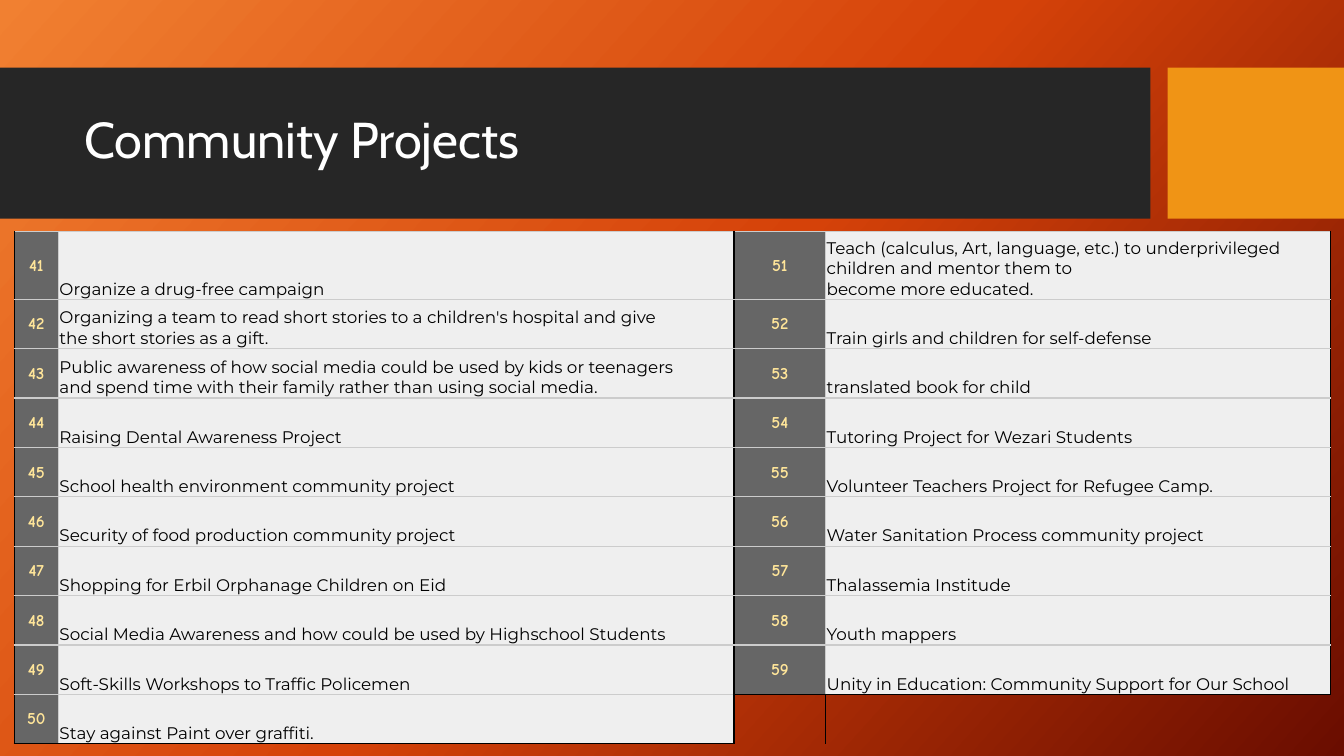
from copy import deepcopy
from itertools import zip_longest

from lxml.etree import SubElement
from pptx import Presentation
from pptx.dml.color import RGBColor
from pptx.enum.shapes import MSO_SHAPE
from pptx.enum.text import MSO_ANCHOR, PP_ALIGN
from pptx.oxml.ns import qn
from pptx.util import Inches, Pt

WIDE, HIGH = 13.33, 7.5
BLACK, GREY = "000000", "CCCCCC"
PLAIN = "{2D5ABB26-0587-4C30-8999-92F81FD0307C}"  # table style without grid
COLS = [0.44, 6.7, 0.91, 5.01]
ROWS = [0.67] + [0.49] * 9
FIRST = 41
LEFT = [
    "Organize a drug-free campaign",
    "Organizing a team to read short stories to a children's hospital and give\n"
    "the short stories as a gift.",
    "Public awareness of how social media could be used by kids or teenagers \n"
    "and spend time with their family rather than using social media.",
    "Raising Dental Awareness Project",
    "School health environment community project",
    "Security of food production community project",
    "Shopping for Erbil Orphanage Children on Eid",
    "Social Media Awareness and how could be used by Highschool Students",
    "Soft-Skills Workshops to Traffic Policemen",
    "Stay against Paint over graffiti.",
]
RIGHT = [
    "Teach (calculus, Art, language, etc.) to underprivileged "
    "children and mentor them to\nbecome more educated.",
    "Train girls and children for self-defense",
    "translated book for child",
    "Tutoring Project for Wezari Students",
    "Volunteer Teachers Project for Refugee Camp.",
    "Water Sanitation Process community project",
    "Thalassemia Institude",
    "Youth mappers",
    "Unity in Education: Community Support for Our School",
]


def paint(target, tone):
    target.fill.solid()
    target.fill.fore_color.rgb = RGBColor.from_string(tone)


def style(para, face, size, tone, bold=False):
    for run in para.runs:
        font = run.font
        font.name, font.size, font.bold = face, Pt(size), bold
        font.color.rgb = RGBColor.from_string(tone)


def backdrop(slide):
    fill = slide.background.fill
    fill.gradient()
    fill.gradient_angle = 318
    stops = slide.element.find(".//" + qn("a:gsLst"))
    stops.append(deepcopy(stops[-1]))
    tones = ["F18031", "D54209", "6A0D00"]
    for stop, tone, place in zip(fill.gradient_stops, tones, [0, 0.5, 1]):
        stop.color.rgb = RGBColor.from_string(tone)
        stop.position = place


def block(slide, left, top, width, height, tone):
    box = slide.shapes.add_shape(
        MSO_SHAPE.RECTANGLE, *map(Inches, (left, top, width, height)))
    box.shadow.inherit = False
    paint(box, tone)
    box.line.fill.background()


def banner(slide, top, height):
    """Dark title band with an accent block at its right end."""
    band, accent = 11.41, 1.75
    block(slide, 0, top, band, height, "262626")
    block(slide, WIDE - accent, top, accent, height, "F09415")
    box = slide.shapes.add_textbox(
        Inches(0.74), Inches(top + 0.15), Inches(band - 0.9), Inches(1.18))
    frame = box.text_frame
    frame.word_wrap = True
    frame.vertical_anchor = MSO_ANCHOR.MIDDLE
    frame.text = "Community Projects"
    para = frame.paragraphs[0]
    para.line_spacing = 0.9
    style(para, "Cabin", 36, "FFFFFF")


def edge(cell, **tones):
    """Draw 1 pt borders, given in the order L, R, T, B."""
    props = cell._tc.get_or_add_tcPr()
    for spot, (side, tone) in enumerate(tones.items()):
        line = SubElement(props, qn("a:ln" + side), w=str(Pt(1)))
        fill = SubElement(line, qn("a:solidFill"))
        SubElement(fill, qn("a:srgbClr"), val=tone)
        props.insert(spot, line)


def write(cell, text, number, last):
    cell.margin_left = cell.margin_right = cell.margin_top = Inches(0.01)
    cell.margin_bottom = 0
    para = cell.text_frame.paragraphs[0]
    para.text = text
    foot = BLACK if last else GREY
    if number:
        cell.vertical_anchor = MSO_ANCHOR.MIDDLE
        para.alignment = PP_ALIGN.CENTER
        style(para, "Comic Neue", 12, "FFE599", True)
        paint(cell, "666666")
        edge(cell, L=BLACK, R=GREY, T=GREY, B=foot)
    else:
        cell.vertical_anchor = MSO_ANCHOR.BOTTOM
        style(para, "Montserrat", 12, BLACK)
        paint(cell, "EFEFEF")
        edge(cell, L=GREY, R=BLACK, T=GREY, B=foot)


def listing(slide, left, top):
    """Two numbered lists side by side in one table."""
    frame = slide.shapes.add_table(
        len(ROWS), len(COLS), Inches(left), Inches(top),
        Inches(sum(COLS)), Inches(sum(ROWS)))
    table = frame.table
    table.first_row = table.horz_banding = False
    table._tbl.find(".//" + qn("a:tableStyleId")).text = PLAIN
    for col, width in zip(table.columns, COLS):
        col.width = Inches(width)
    for row, height in zip(table.rows, ROWS):
        row.height = Inches(height)
    for row, pair in enumerate(zip_longest(LEFT, RIGHT)):
        for side, (text, items) in enumerate(zip(pair, (LEFT, RIGHT))):
            label, body = (table.cell(row, 2 * side + k) for k in (0, 1))
            if text is None:
                label.fill.background()
                body.fill.background()
                edge(label, L=BLACK, T=BLACK)
                edge(body, T=BLACK)
                continue
            last = row == len(items) - 1
            number = FIRST + side * len(LEFT) + row
            write(label, str(number), True, last)
            write(body, text, False, last)


def main():
    deck = Presentation()
    deck.slide_width, deck.slide_height = Inches(WIDE), Inches(HIGH)
    slide = deck.slides.add_slide(deck.slide_layouts[6])
    backdrop(slide)
    banner(slide, 0.67, 1.5)
    listing(slide, 0.14, 2.3)
    deck.save("out.pptx")


if __name__ == "__main__":
    main()
